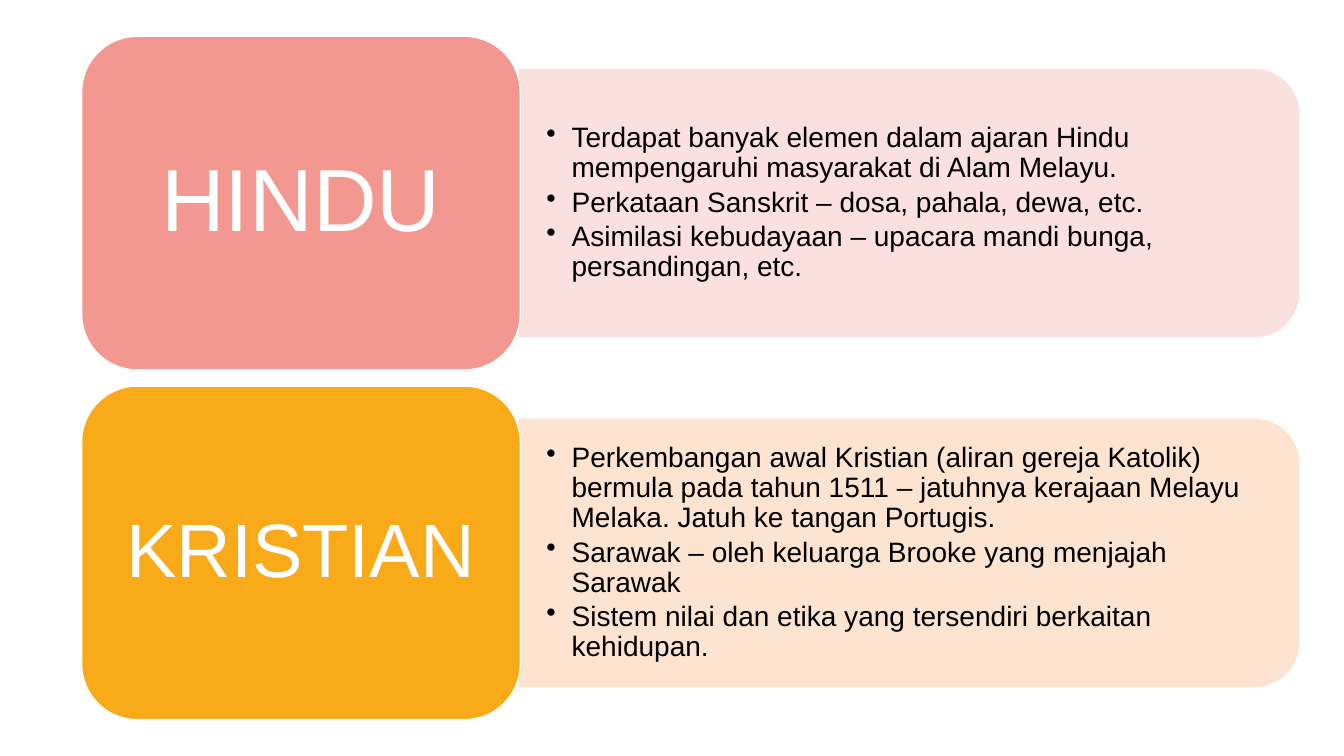
"""Build a slide that pairs two religions with their points."""
from pptx import Presentation
from pptx import util as u
from pptx.dml.color import RGBColor
from pptx.enum import shapes, text
from pptx.oxml.ns import qn
from lxml import etree

WHITE = RGBColor(0xFF, 0xFF, 0xFF)
BLACK = RGBColor(0x00, 0x00, 0x00)
CORAL = RGBColor(0xF3, 0x98, 0x91)
PINK = RGBColor(0xFA, 0xDD, 0xDC)
AMBER = RGBColor(0xF9, 0xAA, 0x19)
PEACH = RGBColor(0xFD, 0xE2, 0xCC)
FONT = "Arial"
TOP, PITCH = 0.36, 3.47
LABEL_W, LABEL_H = 4.35, 3.31
PANEL_W, PANEL_H = 7.73, 2.65

ROWS = [
    ("HINDU", 63, CORAL, PINK, [
        "Terdapat banyak elemen dalam ajaran Hindu mempengaruhi masyarakat di Alam Melayu.",
        "Perkataan Sanskrit – dosa, pahala, dewa, etc.",
        "Asimilasi kebudayaan – upacara mandi bunga, persandingan, etc.",
    ]),
    ("KRISTIAN", 54, AMBER, PEACH, [
        "Perkembangan awal Kristian (aliran gereja Katolik) bermula pada tahun 1511 – "
        "jatuhnya kerajaan Melayu Melaka. Jatuh ke tangan Portugis.",
        "Sarawak – oleh keluarga Brooke yang menjajah Sarawak",
        "Sistem nilai dan etika yang tersendiri berkaitan kehidupan.",
    ]),
]


def add_box(s, kind, left, top, width, height, fill, line):
    sp = s.shapes.add_shape(kind, u.Inches(left), u.Inches(top),
                            u.Inches(width), u.Inches(height))
    sp.shadow.inherit = False
    sp.fill.solid()
    sp.fill.fore_color.rgb = fill
    sp.line.color.rgb = line
    sp.line.width = u.Pt(1)
    return sp


def set_frame(sp, side, edge):
    tf = sp.text_frame
    tf.word_wrap = True
    tf.vertical_anchor = text.MSO_ANCHOR.MIDDLE
    tf.margin_left = tf.margin_right = u.Inches(side)
    tf.margin_top = tf.margin_bottom = u.Inches(edge)
    return tf


def add_run(p, words, size, color):
    p.line_spacing = 0.9
    r = p.add_run()
    r.text = words
    r.font.name = FONT
    r.font.size = u.Pt(size)
    r.font.color.rgb = color


def add_bullet(p):
    pPr = p._p.get_or_add_pPr()
    pPr.set("marL", str(u.Inches(0.25)))
    pPr.set("indent", str(-u.Inches(0.25)))
    etree.SubElement(pPr, qn("a:buChar")).set("char", "•")


def add_panel(s, top, color):
    left = 5.15 + (PANEL_W - PANEL_H) / 2
    top += (LABEL_H - PANEL_W) / 2
    sp = add_box(s, shapes.MSO_SHAPE.ROUND_2_SAME_RECTANGLE, left, top,
                 PANEL_H, PANEL_W, color, color)
    sp.rotation = 90
    for clr in sp._element.spPr.iter(qn("a:srgbClr")):
        etree.SubElement(clr, qn("a:alpha")).set("val", "90000")


def add_points(s, top, points):
    sp = s.shapes.add_textbox(u.Inches(5.15), u.Inches(top + 0.46),
                              u.Inches(7.6), u.Inches(2.39))
    tf = set_frame(sp, 0.27, 0.14)
    for i, point in enumerate(points):
        p = tf.add_paragraph() if i else tf.paragraphs[0]
        add_run(p, point, 20, BLACK)
        p.space_after = u.Pt(3)
        add_bullet(p)


def add_label(s, top, name, size, color):
    sp = add_box(s, shapes.MSO_SHAPE.ROUNDED_RECTANGLE, 0.81, top,
                 LABEL_W, LABEL_H, color, WHITE)
    p = set_frame(sp, 0.25, 0.13).paragraphs[0]
    p.alignment = text.PP_ALIGN.CENTER
    add_run(p, name, size, WHITE)
    p.space_after = u.Pt(size * 0.35)


def main():
    prs = Presentation()
    prs.slide_width, prs.slide_height = u.Inches(13.33), u.Inches(7.5)
    s = prs.slides.add_slide(prs.slide_layouts[6])
    for i, (name, size, color, tint, points) in enumerate(ROWS):
        top = TOP + i * PITCH
        add_panel(s, top, tint)
        add_points(s, top, points)
        add_label(s, top, name, size, color)
    prs.save("out.pptx")


if __name__ == "__main__":
    main()
